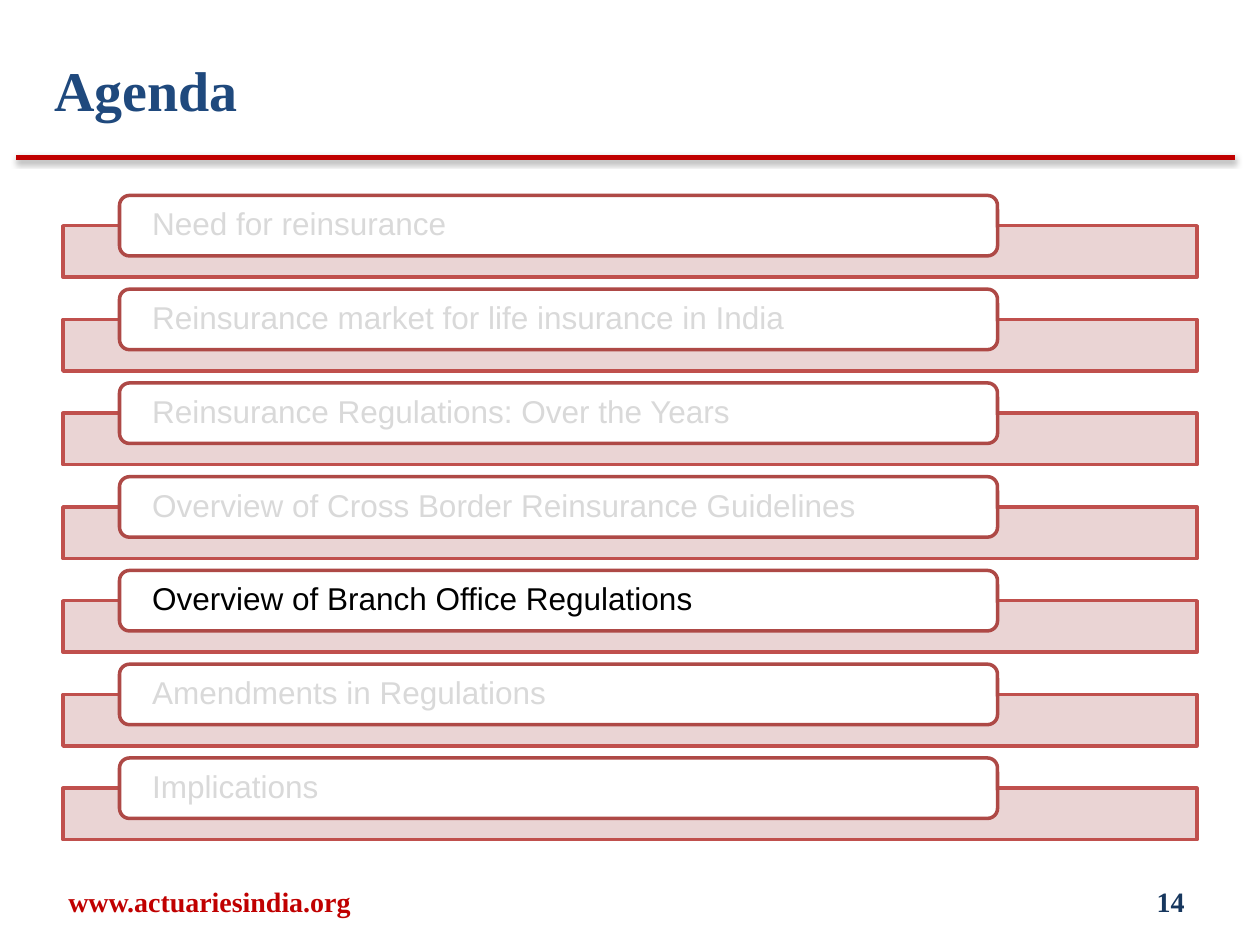
from lxml import etree
from pptx import Presentation
from pptx.dml.color import RGBColor
from pptx.enum.shapes import MSO_CONNECTOR, MSO_SHAPE
from pptx.enum.text import MSO_ANCHOR, MSO_AUTO_SIZE, PP_ALIGN
from pptx.oxml import parse_xml
from pptx.oxml.ns import nsdecls, qn
from pptx.util import Cm, Pt

RECTANGLE = MSO_SHAPE.RECTANGLE
ROUNDED = MSO_SHAPE.ROUNDED_RECTANGLE
STRAIGHT = MSO_CONNECTOR.STRAIGHT
TOP, MIDDLE = MSO_ANCHOR.TOP, MSO_ANCHOR.MIDDLE
LEFT, CENTER, RIGHT = PP_ALIGN.LEFT, PP_ALIGN.CENTER, PP_ALIGN.RIGHT
NO_AUTOFIT = MSO_AUTO_SIZE.NONE

WHITE = RGBColor(0xFF, 0xFF, 0xFF)
BLACK = RGBColor(0x00, 0x00, 0x00)
MUTED = RGBColor(0xD9, 0xD9, 0xD9)
RED = RGBColor(0xC0, 0x00, 0x00)
NAVY = RGBColor(0x1F, 0x49, 0x7D)
DARK_NAVY = RGBColor(0x17, 0x37, 0x5E)
BAR_FILL = RGBColor(0xE8, 0xD0, 0xD0)
BAR_LINE = RGBColor(0xC0, 0x50, 0x4D)
LABEL_LINE = RGBColor(0xAE, 0x49, 0x46)

SERIF = "Times New Roman"
SANS = "Arial"

TOPICS = [
    "Need for reinsurance",
    "Reinsurance market for life insurance in India",
    "Reinsurance Regulations: Over the Years",
    "Overview of Cross Border Reinsurance Guidelines",
    "Overview of Branch Office Regulations",
    "Amendments in Regulations",
    "Implications",
]
CURRENT_TOPIC = 4


def write(shape, text, font_name, size, color, bold=False, align=LEFT, anchor=MIDDLE):
    frame = shape.text_frame
    frame.word_wrap = True
    frame.auto_size = NO_AUTOFIT
    frame.vertical_anchor = anchor
    paragraph = frame.paragraphs[0]
    paragraph.alignment = align
    run = paragraph.add_run()
    run.text = text
    run.font.name = font_name
    run.font.size = Pt(size)
    run.font.bold = bold
    run.font.color.rgb = color
    return paragraph


def add_box(slide, preset, left, top, width, height, fill, line):
    shape = slide.shapes.add_shape(preset, Cm(left), Cm(top), Cm(width), Cm(height))
    shape.shadow.inherit = False
    shape.fill.solid()
    shape.fill.fore_color.rgb = fill
    shape.line.color.rgb = line
    shape.line.width = Pt(2)
    return shape


def add_heading(slide, left, top, width, height):
    title = slide.shapes.title
    title.left, title.top = Cm(left), Cm(top)
    title.width, title.height = Cm(width), Cm(height)
    title.text_frame.margin_top = Cm(0.28)
    write(title, "Agenda", SERIF, 32, NAVY, bold=True, anchor=TOP)


def add_rule(slide, left, top, width):
    """Draw the red line under the heading, with its soft shadow."""
    rule = slide.shapes.add_connector(
        STRAIGHT, Cm(left), Cm(top), Cm(left + width), Cm(top))
    rule.line.color.rgb = RED
    rule.line.width = Pt(3)
    rule._element.spPr.append(parse_xml(
        f'<a:effectLst {nsdecls("a")}>'
        '<a:outerShdw blurRad="40000" dist="20000" dir="5400000" rotWithShape="0">'
        '<a:srgbClr val="000000"><a:alpha val="38000"/></a:srgbClr>'
        '</a:outerShdw></a:effectLst>'))


def add_topic(slide, left, top, width, text, color):
    """Draw one bar with its rounded label overlapping the upper edge."""
    bar = add_box(slide, RECTANGLE, left, top + 0.61, width, 1.04, BAR_FILL, BAR_LINE)
    bar_color = bar.fill._xPr.find(qn("a:solidFill"))[0]
    etree.SubElement(bar_color, qn("a:alpha")).set("val", "90000")

    label = add_box(slide, ROUNDED, left + 1.14, top, 17.7, 1.22, WHITE, LABEL_LINE)
    frame = label.text_frame
    frame.margin_left = frame.margin_right = Cm(0.6)
    frame.margin_top = frame.margin_bottom = 0
    write(label, text, SANS, 18, color).line_spacing = 0.9


def add_agenda(slide, left, top, width, pitch):
    for index, topic in enumerate(TOPICS):
        color = BLACK if index == CURRENT_TOPIC else MUTED
        add_topic(slide, left, top + index * pitch, width, topic, color)


def add_footer(slide, left, top, width, height):
    parts = [
        ("www.actuariesindia.org", left, 8.05, RED, CENTER),
        ("14", left + width - 5.92, 5.92, DARK_NAVY, RIGHT),
    ]
    for text, part_left, part_width, color, align in parts:
        box = slide.shapes.add_textbox(
            Cm(part_left), Cm(top), Cm(part_width), Cm(height))
        write(box, text, SERIF, 16, color, bold=True, align=align)


def main():
    presentation = Presentation()
    presentation.slide_width, presentation.slide_height = Cm(25.4), Cm(19.05)
    title_only = presentation.slide_layouts[5]
    slide = presentation.slides.add_slide(title_only)
    add_rule(slide, 0.33, 3.17, 24.56)
    add_footer(slide, 0.2, 17.65, 23.93, 1.02)
    add_heading(slide, 0.84, 0.84, 16.94, 1.7)
    add_agenda(slide, 1.27, 3.94, 22.86, 1.89)
    presentation.save("out.pptx")


if __name__ == "__main__":
    main()
